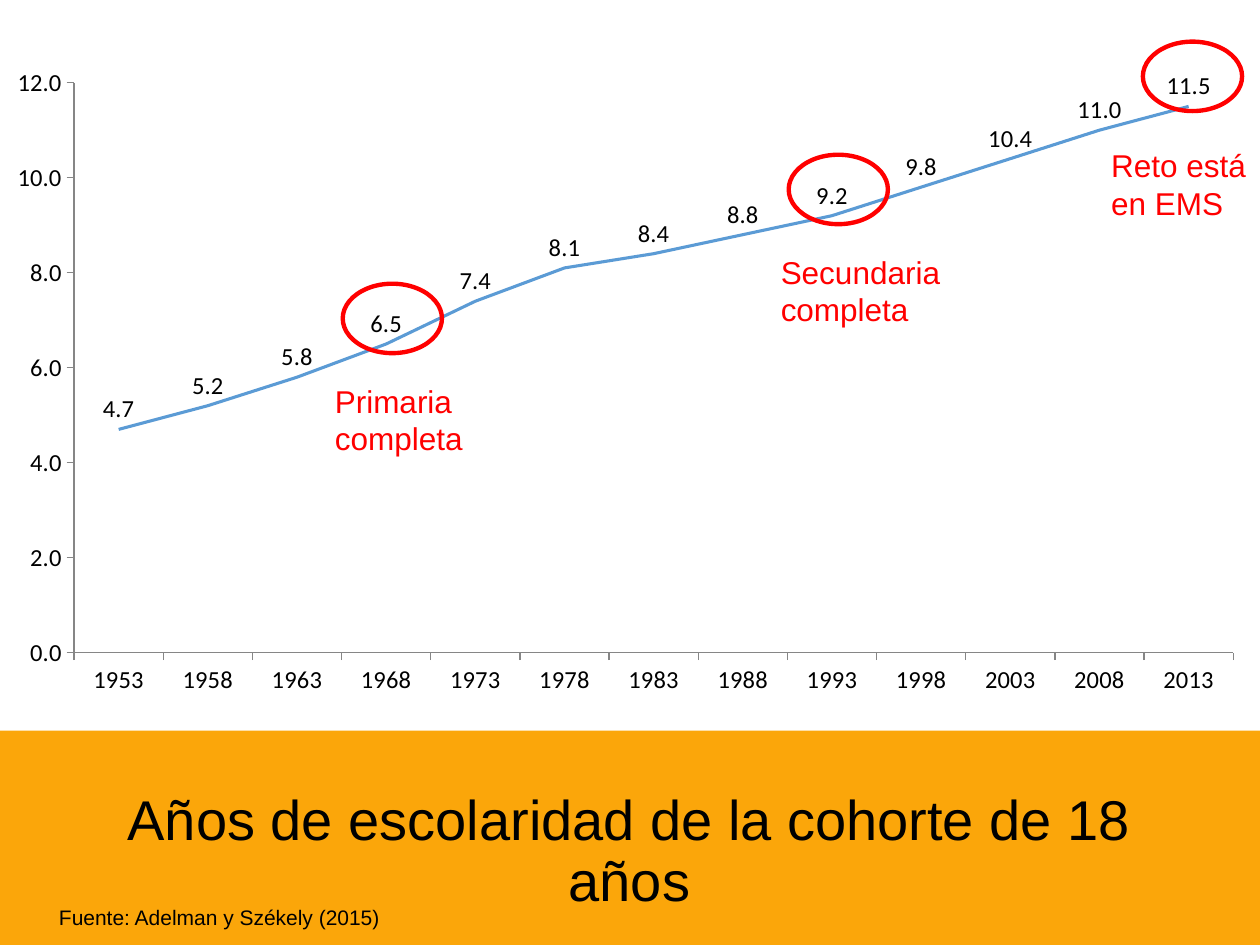
from lxml import etree
from pptx import Presentation
from pptx.chart.data import CategoryChartData
from pptx.dml.color import RGBColor
from pptx.enum.chart import XL_CHART_TYPE, XL_LABEL_POSITION, XL_MARKER_STYLE, XL_TICK_MARK
from pptx.enum.shapes import MSO_SHAPE
from pptx.enum.text import MSO_ANCHOR, PP_ALIGN
from pptx.oxml.ns import qn
from pptx.util import Cm, Pt

LINE = XL_CHART_TYPE.LINE
ABOVE = XL_LABEL_POSITION.ABOVE
NO_MARKER = XL_MARKER_STYLE.NONE
TICK_OUT = XL_TICK_MARK.OUTSIDE
RECT, OVAL = MSO_SHAPE.RECTANGLE, MSO_SHAPE.OVAL
TOP = MSO_ANCHOR.TOP
LEFT, CENTER = PP_ALIGN.LEFT, PP_ALIGN.CENTER

BLACK = RGBColor(0x00, 0x00, 0x00)
RED = RGBColor(0xFF, 0x00, 0x00)
ORANGE = RGBColor(0xFB, 0xA6, 0x0A)
BLUE = RGBColor(0x5B, 0x9B, 0xD5)
GRAY = RGBColor(0x86, 0x86, 0x86)

YEARS = [str(year) for year in range(1953, 2014, 5)]
SCHOOLING = [4.7, 5.2, 5.8, 6.5, 7.4, 8.1, 8.4, 8.8, 9.2, 9.8, 10.4, 11.0, 11.5]
PLOT_AREA = {"x": 0.06, "y": 0.04, "w": 0.92, "h": 0.87}
MILESTONES = [
    ("Primaria completa", 6.91, 5.72, -0.41, 1.85),
    ("Secundaria completa", 15.9, 3.12, -0.41, 1.85),
    ("Reto está en EMS", 23.04, 0.84, -0.89, 1.98),
]


class Deck:
    font = "Arial"
    chart_font = "Calibri"

    def __init__(self, width, height):
        self.prs = Presentation()
        self.prs.slide_width, self.prs.slide_height = Cm(width), Cm(height)
        self.slide = None

    def add_slide(self):
        self.slide = self.prs.slides.add_slide(self.prs.slide_layouts[5])

    def fill_text(self, sp, text, size, color, align=LEFT):
        tf = sp.text_frame
        tf.word_wrap = True
        tf.vertical_anchor = TOP
        p = tf.paragraphs[0]
        p.alignment = align
        r = p.add_run()
        r.text = text
        r.font.name, r.font.size = self.font, Pt(size)
        r.font.color.rgb = color
        return p

    def title(self, text, x, y, w, h):
        sp = self.slide.shapes.title
        sp.left, sp.top, sp.width, sp.height = Cm(x), Cm(y), Cm(w), Cm(h)
        p = self.fill_text(sp, text, 32, BLACK, CENTER)
        p.line_spacing = 0.9

    def text(self, text, x, y, w, h, size, color):
        sp = self.slide.shapes.add_textbox(Cm(x), Cm(y), Cm(w), Cm(h))
        self.fill_text(sp, text, size, color)

    def band(self, x, y, w, h):
        shapes = self.slide.shapes
        sp = shapes.add_shape(RECT, Cm(x), Cm(y), Cm(w), Cm(h))
        sp.shadow.inherit = False
        sp.fill.solid()
        sp.fill.fore_color.rgb = ORANGE
        sp.line.fill.background()
        shapes.title._element.addprevious(sp._element)

    def ring(self, x, y, w, h):
        sp = self.slide.shapes.add_shape(OVAL, Cm(x), Cm(y), Cm(w), Cm(h))
        sp.shadow.inherit = False
        sp.fill.background()
        sp.line.color.rgb = RED
        sp.line.width = Pt(2.5)

    def line_chart(self, cats, vals, x, y, w, h):
        data = CategoryChartData(number_format="0.0")
        data.categories = cats
        data.add_series("Series 1", vals)
        chart = self.slide.shapes.add_chart(LINE, Cm(x), Cm(y), Cm(w), Cm(h), data).chart
        chart.has_legend = chart.has_title = False
        chart.font.name, chart.font.size = self.chart_font, Pt(14)
        chart.font.color.rgb = BLACK
        for axis in (chart.category_axis, chart.value_axis):
            axis.major_tick_mark = TICK_OUT
            axis.has_major_gridlines = False
            axis.format.line.color.rgb = GRAY
            axis.format.line.width = Pt(0.75)
        axis = chart.value_axis
        axis.minimum_scale, axis.maximum_scale, axis.major_unit = 0, 12, 2
        axis.tick_labels.number_format = "0.0"
        axis.tick_labels.number_format_is_linked = False
        plot = chart.plots[0]
        plot.vary_by_categories = False
        plot.has_data_labels = True
        labels = plot.data_labels
        labels.show_value = True
        labels.position = ABOVE
        labels.number_format = "0.0"
        labels.number_format_is_linked = False
        series = plot.series[0]
        series.smooth = False
        series.marker.style = NO_MARKER
        series.format.line.color.rgb = BLUE
        series.format.line.width = Pt(1.75)
        self.place_plot(chart)

    def place_plot(self, chart):
        area = chart._chartSpace.find(".//" + qn("c:plotArea"))
        for old in area.findall(qn("c:layout")):
            area.remove(old)
        layout = etree.Element(qn("c:layout"))
        manual = etree.SubElement(layout, qn("c:manualLayout"))
        settings = {"layoutTarget": "inner", "xMode": "edge", "yMode": "edge", **PLOT_AREA}
        for tag, val in settings.items():
            etree.SubElement(manual, qn("c:" + tag)).set("val", str(val))
        area.insert(0, layout)


def main():
    deck = Deck(25.4, 19.05)
    deck.add_slide()
    deck.band(0, 14.73, 25.4, 4.32)
    deck.title("Años de escolaridad de la cohorte de 18 años", 0.94, 15.85, 23.5, 1.5)
    deck.text("Fuente: Adelman y Székely (2015)", 0.94, 18.11, 10.41, 0.77, 12, BLACK)
    deck.line_chart(YEARS, SCHOOLING, -0.03, 1.14, 25.4, 13.21)
    for label, x, y, dx, dy in MILESTONES:
        deck.ring(x, y, 2, 1.4)
        deck.text(label, x + dx, y + dy, 3.81, 1.8, 18, RED)
    deck.prs.save("out.pptx")


if __name__ == "__main__":
    main()
